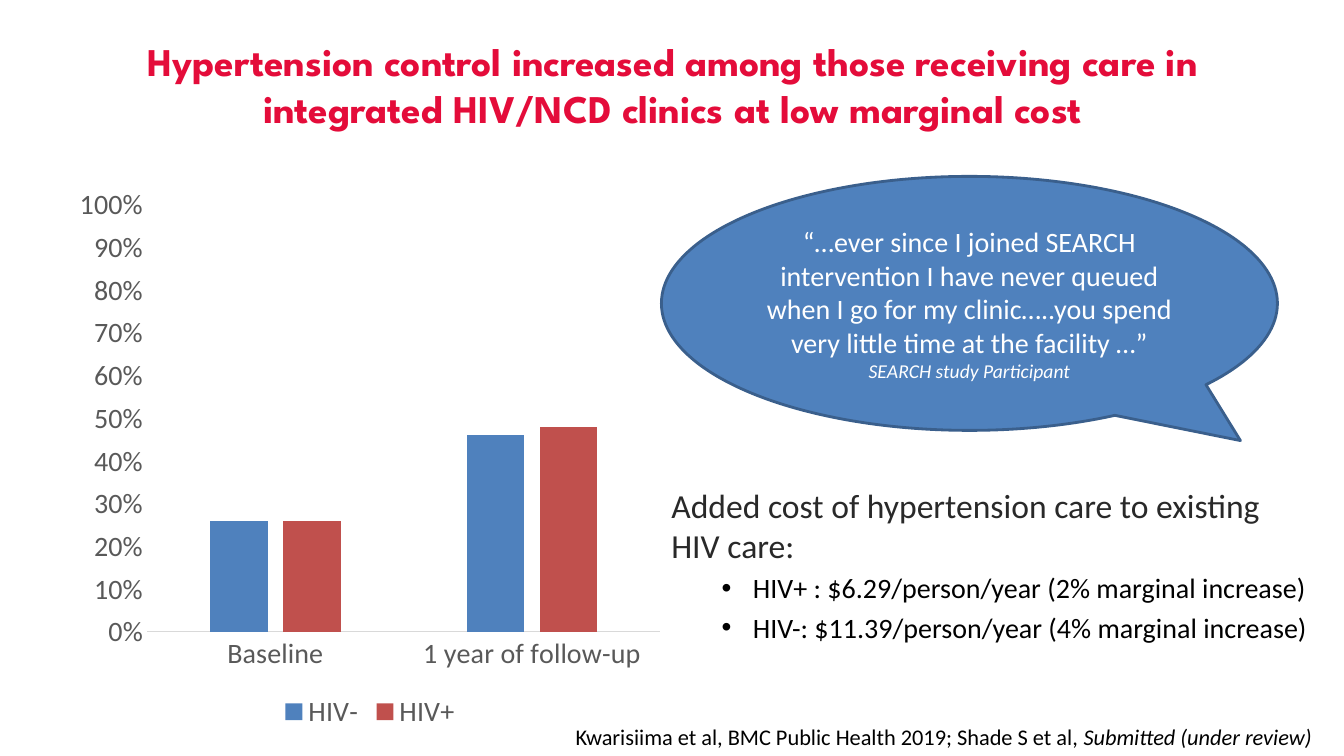
import pptx
import pptx.chart.data
import pptx.dml.color
import pptx.enum.chart
import pptx.enum.shapes
import pptx.enum.text
import pptx.oxml
import pptx.oxml.ns
import pptx.util
from dataclasses import dataclass

Inches = pptx.util.Inches
ALIGN = pptx.enum.text.PP_ALIGN
ANCHOR = pptx.enum.text.MSO_ANCHOR

# Content
TITLE = ("Hypertension control increased among those receiving care in "
         "integrated HIV/NCD clinics at low marginal cost")
CATEGORIES = ["Baseline", "1 year of follow-up"]
CONTROL_RATES = {"HIV-": (0.26, 0.46), "HIV+": (0.26, 0.48)}
QUOTE = ("“…ever since I joined SEARCH intervention I have never queued when I go "
         "for my clinic…..you spend very little time at the facility …”")
SPEAKER = "SEARCH study Participant"
COST_HEADING = "Added cost of hypertension care to existing HIV care:"
COSTS = ["HIV+ : $6.29/person/year (2% marginal increase)",
         "HIV-: $11.39/person/year (4% marginal increase)"]
CITATION = "Kwarisiima et al, BMC Public Health 2019; Shade S et al, "
CITATION_STATUS = "Submitted (under review)"

# Left, top, width, height in inches
TITLE_BOX = (0.67, 0.21, 12, 1.25)
CHART_BOX = (0.67, 1.75, 6, 5.54)
QUOTE_BOX = (6.56, 1.75, 6.11, 2.52)
COST_BOX = (6.56, 4.76, 6.58, 1.9)
CITATION_BOX = (5.61, 7.13, 7.53, 0.37)


@dataclass(frozen=True)
class Theme:
    title_font: str = "League Spartan"
    body_font: str = "Calibri"
    title: str = "E40C3A"
    heading: str = "292929"
    text: str = "000000"
    light: str = "FFFFFF"
    chart_text: str = "595959"
    axis: str = "D9D9D9"
    series: tuple = ("4F81BD", "C0504D")
    callout_line: str = "3A5F8C"
    title_size: int = 28
    heading_size: int = 24
    body_size: int = 20
    citation_size: int = 16
    speaker_size: int = 14


THEME = Theme()


def color(value):
    return pptx.dml.color.RGBColor.from_string(value)


def inches(box):
    return [Inches(length) for length in box]


def style(font, size, value, name=THEME.body_font):
    font.name, font.size = name, pptx.util.Pt(size)
    font.color.rgb = color(value)


def fill(part, value):
    part.fill.solid()
    part.fill.fore_color.rgb = color(value)


def add_bullet(paragraph, left, hanging):
    properties = paragraph._p.get_or_add_pPr()
    properties.set("marL", str(Inches(left)))
    properties.set("indent", str(-Inches(hanging)))
    namespace = pptx.oxml.ns.nsdecls("a")
    for element in ('<a:buFont %s typeface="Arial"/>', '<a:buChar %s char="•"/>'):
        properties.append(pptx.oxml.parse_xml(element % namespace))


def add_title(slide):
    title = slide.shapes.title
    title.left, title.top, title.width, title.height = inches(TITLE_BOX)
    frame = title.text_frame
    frame.text, frame.word_wrap = TITLE, True
    frame.vertical_anchor = ANCHOR.MIDDLE
    paragraph = frame.paragraphs[0]
    paragraph.alignment = ALIGN.CENTER
    style(paragraph.font, THEME.title_size, THEME.title, THEME.title_font)
    paragraph.font.bold = True


def add_control_chart(slide):
    data = pptx.chart.data.CategoryChartData(number_format="0%")
    data.categories = CATEGORIES
    for name, values in CONTROL_RATES.items():
        data.add_series(name, values)
    chart = slide.shapes.add_chart(
        pptx.enum.chart.XL_CHART_TYPE.COLUMN_CLUSTERED, *inches(CHART_BOX), data).chart
    style(chart.font, THEME.body_size, THEME.chart_text)
    chart.has_title = False
    chart.has_legend = True
    chart.legend.position = pptx.enum.chart.XL_LEGEND_POSITION.BOTTOM
    chart.legend.include_in_layout = False
    style(chart.legend.font, THEME.body_size, THEME.chart_text)

    plot = chart.plots[0]
    plot.gap_width, plot.overlap, plot.vary_by_categories = 219, -27, False
    for series, value in zip(plot.series, THEME.series):
        fill(series.format, value)

    rates = chart.value_axis
    rates.minimum_scale, rates.maximum_scale, rates.major_unit = 0, 1, 0.1
    rates.tick_labels.number_format = "0%"
    rates.tick_labels.number_format_is_linked = False
    for axis in (chart.category_axis, rates):
        axis.has_major_gridlines = False
        axis.major_tick_mark = axis.minor_tick_mark = pptx.enum.chart.XL_TICK_MARK.NONE
        style(axis.tick_labels.font, THEME.body_size, THEME.chart_text)
    rates.format.line.fill.background()
    baseline = chart.category_axis.format.line
    baseline.color.rgb, baseline.width = color(THEME.axis), pptx.util.Pt(0.75)


def add_quote(slide):
    callout = slide.shapes.add_shape(
        pptx.enum.shapes.MSO_SHAPE.OVAL_CALLOUT, *inches(QUOTE_BOX))
    callout.adjustments[0], callout.adjustments[1] = 0.44, 0.54
    callout.shadow.inherit = False
    fill(callout, THEME.series[0])
    callout.line.color.rgb = color(THEME.callout_line)
    callout.line.width = pptx.util.Pt(2)
    frame = callout.text_frame
    frame.word_wrap, frame.vertical_anchor = True, ANCHOR.MIDDLE
    frame.text = QUOTE
    speaker = frame.add_paragraph()
    speaker.text = SPEAKER
    for paragraph, size in zip(frame.paragraphs, (THEME.body_size, THEME.speaker_size)):
        paragraph.alignment = ALIGN.CENTER
        style(paragraph.font, size, THEME.light)
    speaker.font.italic = True


def add_costs(slide):
    frame = slide.shapes.add_textbox(*inches(COST_BOX)).text_frame
    frame.word_wrap = True
    frame.text = COST_HEADING
    style(frame.paragraphs[0].font, THEME.heading_size, THEME.heading)
    for cost in COSTS:
        paragraph = frame.add_paragraph()
        paragraph.text, paragraph.level = cost, 1
        paragraph.space_before = pptx.util.Pt(THEME.body_size * 0.2)
        add_bullet(paragraph, 0.81, 0.31)
        style(paragraph.font, THEME.body_size, THEME.text)


def add_citation(slide):
    frame = slide.shapes.add_textbox(*inches(CITATION_BOX)).text_frame
    frame.word_wrap = False
    frame.auto_size = pptx.enum.text.MSO_AUTO_SIZE.SHAPE_TO_FIT_TEXT
    paragraph = frame.paragraphs[0]
    style(paragraph.font, THEME.citation_size, THEME.text)
    paragraph.add_run().text = CITATION
    status = paragraph.add_run()
    status.text = CITATION_STATUS
    status.font.italic = True


def main():
    presentation = pptx.Presentation()
    presentation.slide_width, presentation.slide_height = Inches(13.33), Inches(7.5)
    slide = presentation.slides.add_slide(presentation.slide_layouts[5])
    for add_part in (add_title, add_costs, add_control_chart, add_quote, add_citation):
        add_part(slide)
    presentation.save("out.pptx")


if __name__ == "__main__":
    main()
